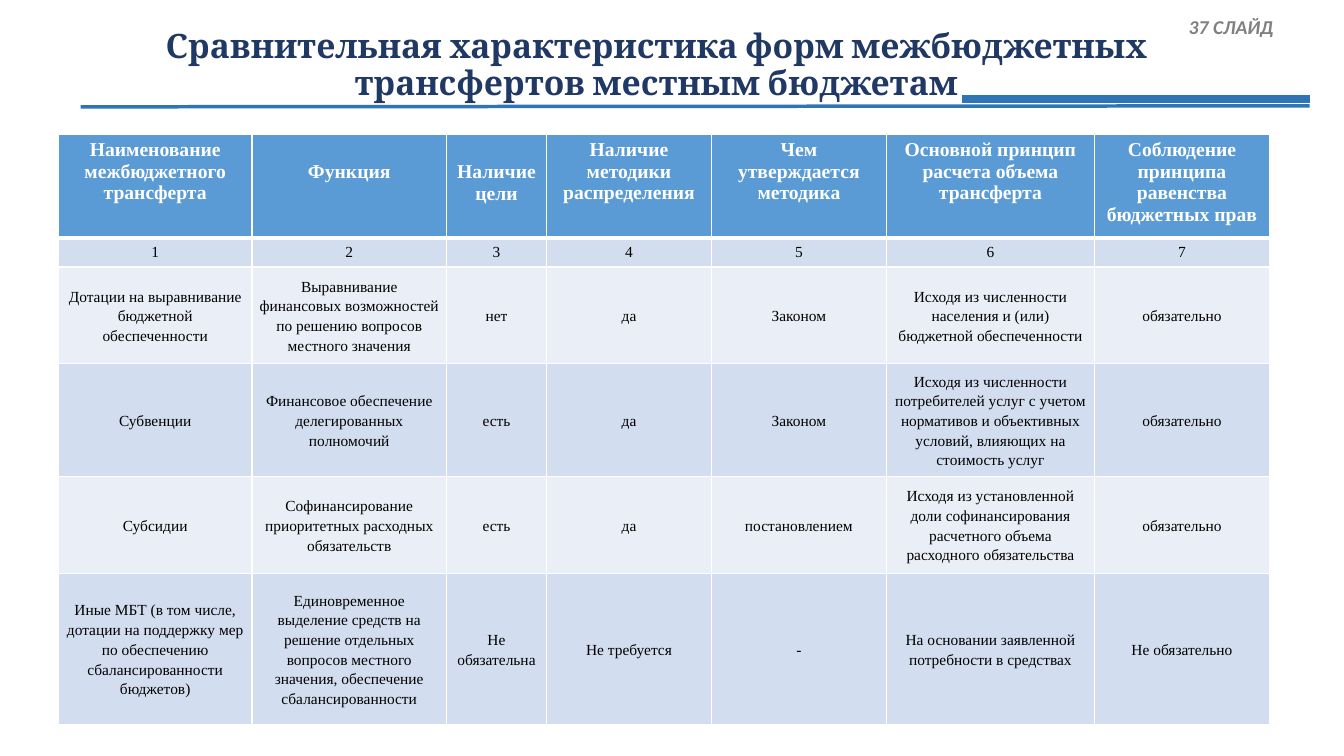
from lxml.etree import SubElement
from pptx import Presentation
from pptx.dml.color import RGBColor
from pptx.enum.shapes import MSO_CONNECTOR
from pptx.enum.text import MSO_ANCHOR, MSO_AUTO_SIZE, PP_ALIGN
from pptx.oxml import parse_xml
from pptx.oxml.ns import nsdecls, qn
from pptx.util import Emu, Pt

SCALE = 9144  # EMU in one px, 100 px to the inch
WHITE, BLACK, NAVY, GRAY = "FFFFFF", "000000", "203864", "808080"
RULE_BLUE, HEADER_BLUE = "2E75B6", "5B9BD5"
BANDS = ("D2DEEF", "EAEFF7")
BODY_FONT = "Times New Roman"

TITLE = "Сравнительная характеристика форм межбюджетных трансфертов местным бюджетам"
COLUMN_WIDTHS = (192, 193, 99, 164, 173, 207, 173)
ROW_HEIGHTS = (84, 28, 96, 112, 96, 150)
LOWERED_HEADERS = (1, 2)  # columns whose heading starts one line lower
HEADER_LINE = 22
ROWS = (
    ("Наименование межбюджетного трансферта", "Функция", "Наличие цели",
     "Наличие методики распределения", "Чем утверждается методика",
     "Основной принцип расчета объема трансферта",
     "Соблюдение принципа равенства бюджетных прав"),
    ("1", "2", "3", "4", "5", "6", "7"),
    ("Дотации на выравнивание бюджетной обеспеченности",
     "Выравнивание финансовых возможностей по решению вопросов местного значения",
     "нет", "да", "Законом",
     "Исходя из численности населения и (или) бюджетной обеспеченности", "обязательно"),
    ("Субвенции", "Финансовое обеспечение делегированных полномочий",
     "есть", "да", "Законом",
     "Исходя из численности потребителей услуг с учетом нормативов и объективных "
     "условий, влияющих на стоимость услуг", "обязательно"),
    ("Субсидии", "Софинансирование приоритетных расходных обязательств",
     "есть", "да", "постановлением",
     "Исходя из установленной доли софинансирования расчетного объема "
     "расходного обязательства", "обязательно"),
    ("Иные МБТ (в том числе, дотации на поддержку мер по обеспечению "
     "сбалансированности бюджетов)",
     "Единовременное выделение средств на решение отдельных вопросов местного "
     "значения, обеспечение сбалансированности",
     "Не обязательна", "Не требуется", "-",
     "На основании заявленной потребности в средствах", "Не обязательно"),
)


def px(length):
    return Emu(length * SCALE)


def color(value):
    return RGBColor.from_string(value)


def write(frame, text, font, size, ink, bold=False, italic=False, align=None):
    frame.text = text
    para = frame.paragraphs[0]
    para.alignment = align
    span = para.runs[0].font
    span.name, span.size, span.bold, span.italic = font, Pt(size), bold, italic
    span.color.rgb = color(ink)
    return para


def set_title(page):
    title = page.shapes.title
    title.left, title.top, title.width, title.height = px(51), px(26), px(1200), px(79)
    frame = title.text_frame
    para = write(frame, TITLE, "Cambria", 24, NAVY, bold=True, align=PP_ALIGN.CENTER)
    para.line_spacing = 0.9
    frame.word_wrap = True
    frame.auto_size = MSO_AUTO_SIZE.NONE
    frame.vertical_anchor = MSO_ANCHOR.MIDDLE


def add_slide_label(page):
    box = page.shapes.add_textbox(px(1161), px(10), px(118), px(34))
    frame = box.text_frame
    frame.word_wrap = False
    frame.margin_left = px(18)
    write(frame, "37 СЛАЙД", "Calibri", 14, GRAY, bold=True, italic=True)


def add_rule(page, start, end, weight):
    rule = page.shapes.add_connector(MSO_CONNECTOR.STRAIGHT, *map(px, start + end))
    rule.line.color.rgb = color(RULE_BLUE)
    rule.line.width = Pt(weight)
    SubElement(rule._element.spPr, qn("a:effectLst"))


def set_borders(cell, top, bottom):
    properties = cell._tc.get_or_add_tcPr()
    sides = (("lnL", 1), ("lnR", 1), ("lnT", top), ("lnB", bottom))
    for position, (side, weight) in enumerate(sides):
        properties.insert(position, parse_xml(
            f'<a:{side} {nsdecls("a")} w="{Pt(weight)}"><a:solidFill>'
            f'<a:srgbClr val="{WHITE}"/></a:solidFill></a:{side}>'))


def format_cell(cell, text, row, column):
    header = row == 0
    para = write(cell.text_frame, text, BODY_FONT, 14 if header else 11,
                 WHITE if header else BLACK, bold=header, align=PP_ALIGN.CENTER)
    cell.fill.solid()
    cell.fill.fore_color.rgb = color(HEADER_BLUE if header else BANDS[(row - 1) % 2])
    set_borders(cell, top=3 if row == 1 else 1, bottom=3 if header else 1)
    if header and column in LOWERED_HEADERS:
        cell.margin_top = px(5 + HEADER_LINE)
    if row > 1:
        cell.vertical_anchor = MSO_ANCHOR.MIDDLE
        cell.margin_left = cell.margin_right = px(7)
        cell.margin_top = cell.margin_bottom = 0
        para.line_spacing = 1.15
        para.space_after = Pt(10)


def add_comparison_table(page):
    table = page.shapes.add_table(
        len(ROWS), len(COLUMN_WIDTHS), px(58), px(133),
        px(sum(COLUMN_WIDTHS)), px(sum(ROW_HEIGHTS))).table
    for column, width in zip(table.columns, COLUMN_WIDTHS):
        column.width = px(width)
    for row, height in zip(table.rows, ROW_HEIGHTS):
        row.height = px(height)
    for row, texts in enumerate(ROWS):
        for column, text in enumerate(texts):
            format_cell(table.cell(row, column), text, row, column)


def main():
    deck = Presentation()
    deck.slide_width, deck.slide_height = px(1333), px(750)
    page = deck.slides.add_slide(deck.slide_layouts[5])

    # Heading
    set_title(page)
    add_slide_label(page)

    # Rules under the heading
    add_rule(page, (80, 106), (1299, 105), 2.5)
    add_rule(page, (954, 98), (1299, 98), 6)

    # Comparison of transfers
    add_comparison_table(page)
    deck.save("out.pptx")


if __name__ == "__main__":
    main()
